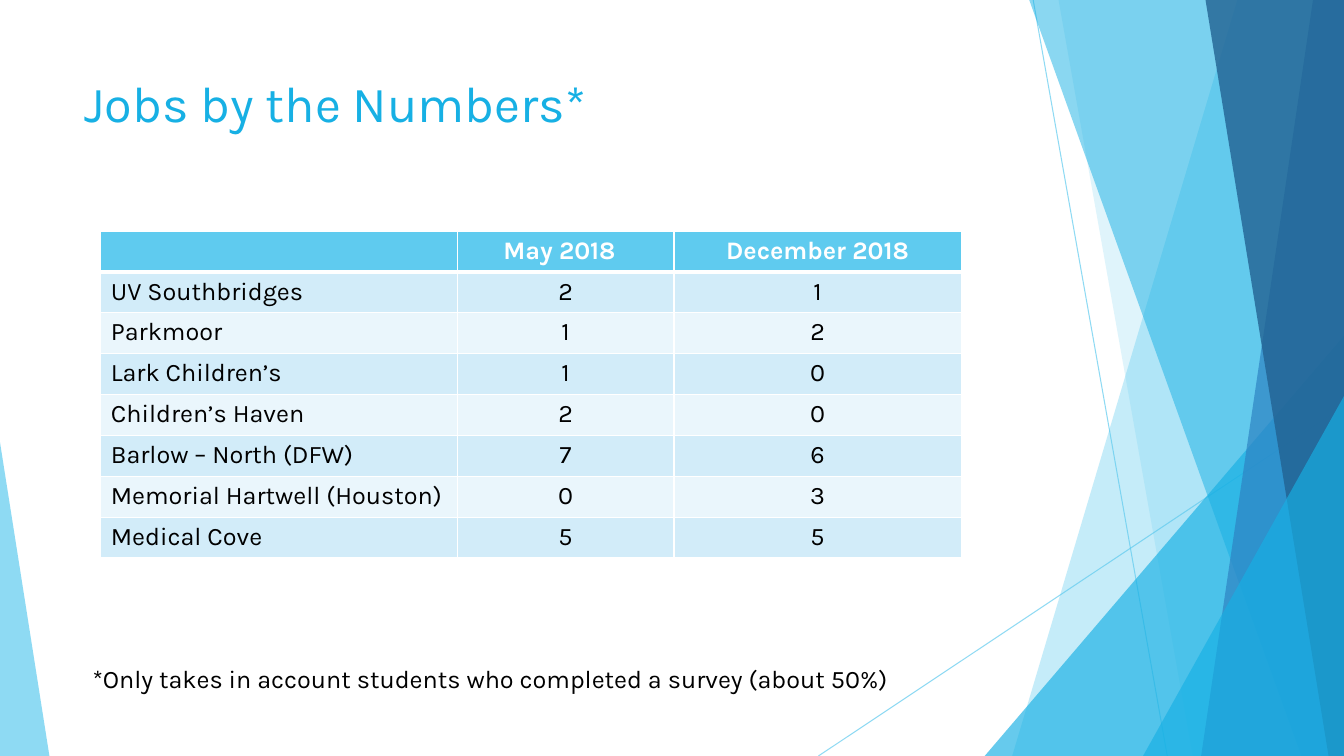
from dataclasses import dataclass

from pptx import Presentation
from pptx.dml.color import RGBColor
from pptx.enum import shapes, text
from pptx.oxml import ns, xmlchemy
from pptx.util import Pt


@dataclass(frozen=True)
class Theme:
    font: str = "Karla"
    title_size: int = 36
    body_size: int = 18
    white: str = "FFFFFF"
    ink: str = "000000"
    sky: str = "5FCBEF"
    azure: str = "17B0E4"
    blue: str = "2E83C3"
    navy: str = "226292"
    band_dark: str = "D2ECF9"
    band_light: str = "EAF6FC"


@dataclass(frozen=True)
class Ray:
    x1: float
    y1: float
    x2: float
    y2: float


@dataclass(frozen=True)
class Ribbon:
    top_x: float
    bottom_x: float
    color: str
    opacity: int


@dataclass(frozen=True)
class Wedge:
    x: float
    y: float
    width: float
    apex: float
    color: str
    opacity: int


@dataclass(frozen=True)
class Label:
    words: str
    x: float
    y: float
    width: float
    height: float
    size: int
    color: str


THEME = Theme()
WIDTH, HEIGHT = 960, 540
RIBBON_TOP = -0.6

DECORATION = [
    Ray(738, 0, 833.8, HEIGHT),
    Ray(WIDTH, 290, 584.6, HEIGHT),
    Ribbon(884, 723, THEME.sky, 36),
    Ribbon(756, 852, THEME.sky, 20),
    Wedge(703.4, 239.8, 256.6, 1, THEME.azure, 66),
    Ribbon(735, 929.5, THEME.azure, 50),
    Ribbon(938, 858, THEME.blue, 70),
    Ribbon(861, 949, THEME.navy, 80),
    Wedge(816.5, 283, 143.5, 1, THEME.azure, 66),
    Wedge(0, 316, 35.3, 0, THEME.sky, 70),
]
LABELS = [
    Label("Jobs by the Numbers*", 53.3, 48, 677, 104, THEME.title_size, THEME.azure),
    Label("*Only takes in account students who completed a survey (about 50%)",
          59, 470, 638, 29, THEME.body_size, THEME.ink),
]
JOBS = [
    ("", "May 2018", "December 2018"),
    ("UV Southbridges", "2", "1"),
    ("Parkmoor", "1", "2"),
    ("Lark Children’s", "1", "0"),
    ("Children’s Haven", "2", "0"),
    ("Barlow – North (DFW)", "7", "6"),
    ("Memorial Hartwell (Houston)", "0", "3"),
    ("Medical Cove", "5", "5"),
]
COLUMN_WIDTHS = (254.6, 154.8, 205.2)
ROW_HEIGHT = 29.2
HEADER_RIGHT_MARGIN = 16


def rgb(color: str) -> RGBColor:
    return RGBColor.from_string(color)


def set_opacity(sp, percent: int) -> None:
    clr = sp._element.spPr.find(".//" + ns.qn("a:srgbClr"))
    alpha = xmlchemy.OxmlElement("a:alpha")
    alpha.set("val", str(percent * 1000))
    clr.append(alpha)


def paint(sp, color: str, opacity: int) -> None:
    sp.shadow.inherit = False
    sp.fill.solid()
    sp.fill.fore_color.rgb = rgb(color)
    sp.line.fill.background()
    set_opacity(sp, opacity)


def draw_ray(s, ray: Ray) -> None:
    line = s.shapes.add_connector(shapes.MSO_CONNECTOR.STRAIGHT, Pt(ray.x1),
                                  Pt(ray.y1), Pt(ray.x2), Pt(ray.y2))
    line.line.color.rgb = rgb(THEME.sky)
    line.line.width = Pt(0.75)
    set_opacity(line, 70)
    line._element.spPr.append(xmlchemy.OxmlElement("a:effectLst"))


def draw_ribbon(s, ribbon: Ribbon) -> None:
    outline = s.shapes.build_freeform(Pt(ribbon.top_x), Pt(RIBBON_TOP))
    corners = [(WIDTH, RIBBON_TOP), (WIDTH, HEIGHT), (ribbon.bottom_x, HEIGHT)]
    outline.add_line_segments([(Pt(x), Pt(y)) for x, y in corners], close=True)
    paint(outline.convert_to_shape(), ribbon.color, ribbon.opacity)


def draw_wedge(s, wedge: Wedge) -> None:
    sp = s.shapes.add_shape(shapes.MSO_SHAPE.ISOSCELES_TRIANGLE, Pt(wedge.x),
                            Pt(wedge.y), Pt(wedge.width), Pt(HEIGHT - wedge.y))
    sp.adjustments[0] = wedge.apex
    paint(sp, wedge.color, wedge.opacity)


def write(tf, words: str, size: int, color: str, bold: bool = False,
          align=text.PP_ALIGN.LEFT) -> None:
    tf.text = words
    p = tf.paragraphs[0]
    p.alignment = align
    p.font.size = Pt(size)
    for r in p.runs:
        r.font.name = THEME.font
        r.font.size = Pt(size)
        r.font.bold = bold
        r.font.color.rgb = rgb(color)


def draw_label(s, label: Label) -> None:
    tf = s.shapes.add_textbox(Pt(label.x), Pt(label.y), Pt(label.width),
                              Pt(label.height)).text_frame
    tf.word_wrap = True
    write(tf, label.words, label.size, label.color)


def set_border(cell, side: str, width: float) -> None:
    ln = xmlchemy.OxmlElement(f"a:ln{side}")
    ln.set("w", str(Pt(width)))
    fill = xmlchemy.OxmlElement("a:solidFill")
    clr = xmlchemy.OxmlElement("a:srgbClr")
    clr.set("val", THEME.white)
    fill.append(clr)
    ln.append(fill)
    cell._tc.get_or_add_tcPr().append(ln)


def draw_table(s) -> None:
    table = s.shapes.add_table(len(JOBS), len(COLUMN_WIDTHS), Pt(72), Pt(165),
                               Pt(sum(COLUMN_WIDTHS)), Pt(ROW_HEIGHT * len(JOBS))).table
    for column, width in zip(table.columns, COLUMN_WIDTHS):
        column.width = Pt(width)
    for i, row in enumerate(JOBS):
        table.rows[i].height = Pt(ROW_HEIGHT)
        header = i == 0
        band = THEME.band_dark if i % 2 else THEME.band_light
        borders = {"L": 1, "R": 1, "T": 3 if i == 1 else 1, "B": 3 if header else 1}
        for j, words in enumerate(row):
            cell = table.cell(i, j)
            for side, width in borders.items():
                set_border(cell, side, width)
            cell.fill.solid()
            cell.fill.fore_color.rgb = rgb(THEME.sky if header else band)
            write(cell.text_frame, words, THEME.body_size,
                  THEME.white if header else THEME.ink, header,
                  text.PP_ALIGN.CENTER if j else text.PP_ALIGN.LEFT)
    table.cell(0, 1).margin_right = Pt(HEADER_RIGHT_MARGIN)


def main() -> None:
    prs = Presentation()
    prs.slide_width, prs.slide_height = Pt(WIDTH), Pt(HEIGHT)
    s = prs.slides.add_slide(prs.slide_layouts[6])
    painters = {Ray: draw_ray, Ribbon: draw_ribbon, Wedge: draw_wedge}
    for item in DECORATION:
        painters[type(item)](s, item)
    for label in LABELS:
        draw_label(s, label)
    draw_table(s)
    prs.save("out.pptx")


if __name__ == "__main__":
    main()
